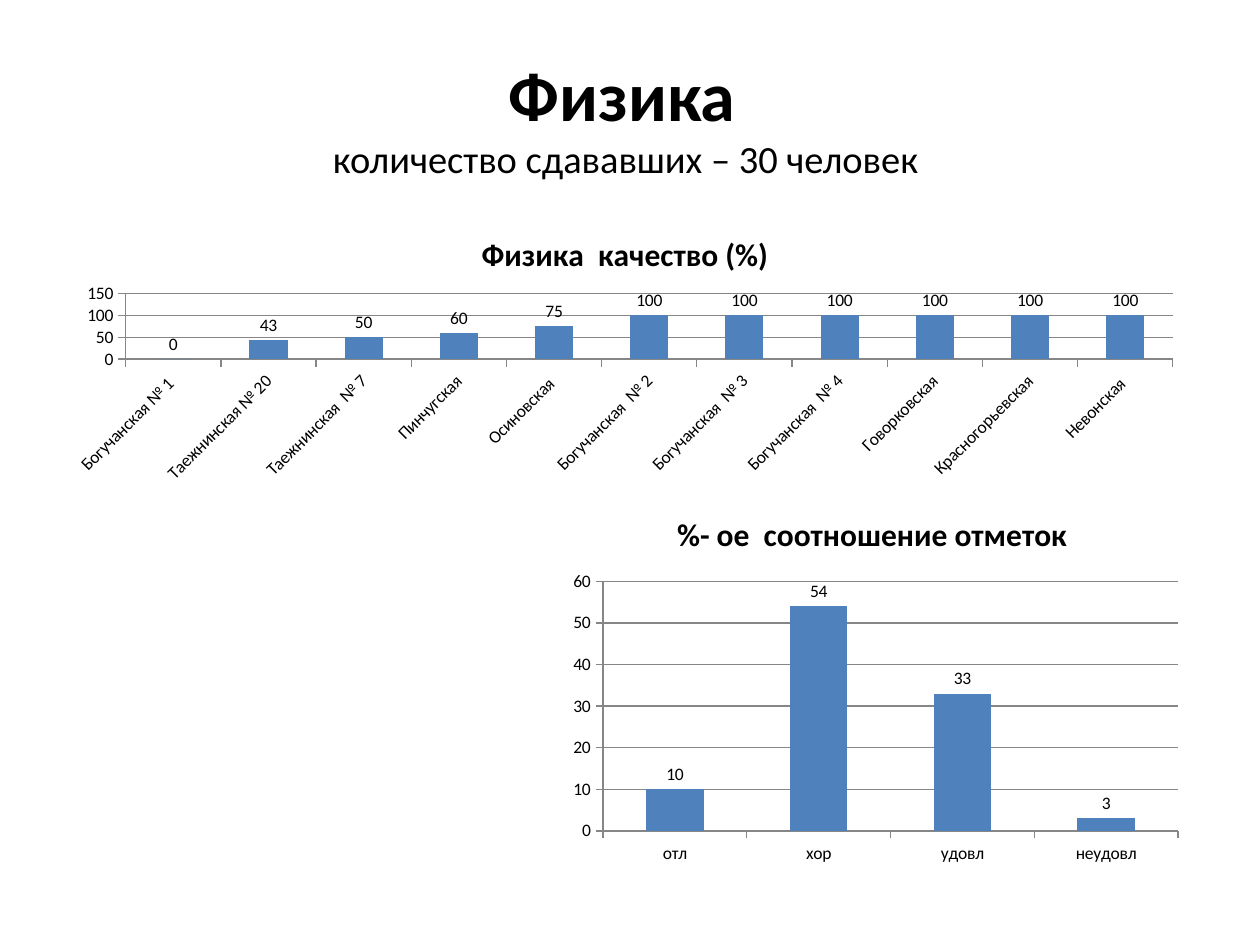
from pptx import Presentation
from pptx.chart.data import CategoryChartData
from pptx.dml.color import RGBColor
from pptx.enum.chart import XL_CHART_TYPE, XL_LABEL_POSITION, XL_TICK_MARK
from pptx.enum.text import MSO_ANCHOR, PP_ALIGN
from pptx.util import Inches, Pt

BLACK = RGBColor(0x00, 0x00, 0x00)
BLUE = RGBColor(0x4F, 0x81, 0xBD)
GREY = RGBColor(0x86, 0x86, 0x86)

QUALITY = {
    "Богучанская № 1 ": 0,
    " Таежнинская № 20": 43,
    "Таежнинская  № 7": 50,
    "Пинчугская": 60,
    "Осиновская ": 75,
    "Богучанская  № 2": 100,
    "Богучанская  № 3": 100,
    "Богучанская  № 4": 100,
    "Говорковская": 100,
    " Красногорьевская": 100,
    "Невонская ": 100,
}
MARKS = {"отл": 10, "хор": 54, "удовл": 33, "неудовл": 3}


class SlideBuilder:
    """Holds the style and the current slide; boxes are shares of its size."""

    font_name = "Calibri"

    def __init__(self, presentation):
        self.width = presentation.slide_width
        self.height = presentation.slide_height
        self.slide = presentation.slides.add_slide(presentation.slide_layouts[6])

    def box(self, left, top, width, height):
        return (round(left * self.width), round(top * self.height),
                round(width * self.width), round(height * self.height))

    def style_font(self, font, size, bold=False):
        font.name = self.font_name
        font.size = Pt(size)
        font.bold = bold
        font.color.rgb = BLACK

    def heading(self, share, title, subtitle):
        text_frame = self.slide.shapes.add_textbox(*self.box(*share)).text_frame
        text_frame.word_wrap = True
        text_frame.vertical_anchor = MSO_ANCHOR.MIDDLE
        text_frame.text = f"{title}\v{subtitle}"
        paragraph = text_frame.paragraphs[0]
        paragraph.alignment = PP_ALIGN.CENTER
        title_run, subtitle_run = paragraph.runs
        self.style_font(title_run.font, 40, bold=True)
        self.style_font(subtitle_run.font, 22)

    def column_chart(self, share, title, values, label_angle=0):
        data = CategoryChartData(number_format="General")
        data.categories = list(values)
        data.add_series("Series 1", list(values.values()))
        chart = self.slide.shapes.add_chart(
            XL_CHART_TYPE.COLUMN_CLUSTERED, *self.box(*share), data).chart
        self.style_font(chart.font, 10)
        chart.has_legend = False

        # Chart title
        chart.has_title = True
        title_frame = chart.chart_title.text_frame
        title_frame.text = title
        self.style_font(title_frame.paragraphs[0].runs[0].font, 18, bold=True)
        chart.chart_title.include_in_layout = False

        # Axes and gridlines
        chart.value_axis.has_major_gridlines = True
        lines = [chart.value_axis.major_gridlines.format.line]
        for axis in (chart.category_axis, chart.value_axis):
            axis.major_tick_mark = XL_TICK_MARK.OUTSIDE
            self.style_font(axis.tick_labels.font, 10)
            lines.append(axis.format.line)
        for line in lines:
            line.color.rgb = GREY
            line.width = Pt(0.75)
        if label_angle:
            body = chart.category_axis._element.txPr.bodyPr
            body.set("rot", str(label_angle * 60000))
            body.set("vert", "horz")

        # Columns and their values
        plot = chart.plots[0]
        plot.vary_by_categories = False
        plot.gap_width = 150
        fill = plot.series[0].format.fill
        fill.solid()
        fill.fore_color.rgb = BLUE
        plot.has_data_labels = True
        labels = plot.data_labels
        labels.show_value = True
        labels.position = XL_LABEL_POSITION.OUTSIDE_END
        self.style_font(labels.font, 10)


def main():
    presentation = Presentation()
    presentation.slide_width = Inches(10)
    presentation.slide_height = Inches(7.5)
    builder = SlideBuilder(presentation)

    builder.heading((0.05, 0.04, 0.9, 1 / 6),
                    "Физика ", "количество сдававших – 30 человек ")
    # Quality by school
    builder.column_chart((0.043, 1.7 / 7.5, 0.906, 2.2 / 7.5),
                         "Физика  качество (%)", QUALITY, label_angle=-45)
    # Share of each mark
    builder.column_chart((0.445, 3.91 / 7.5, 0.5, 0.4),
                         "%- ое  соотношение отметок ", MARKS)

    presentation.save("out.pptx")


if __name__ == "__main__":
    main()
